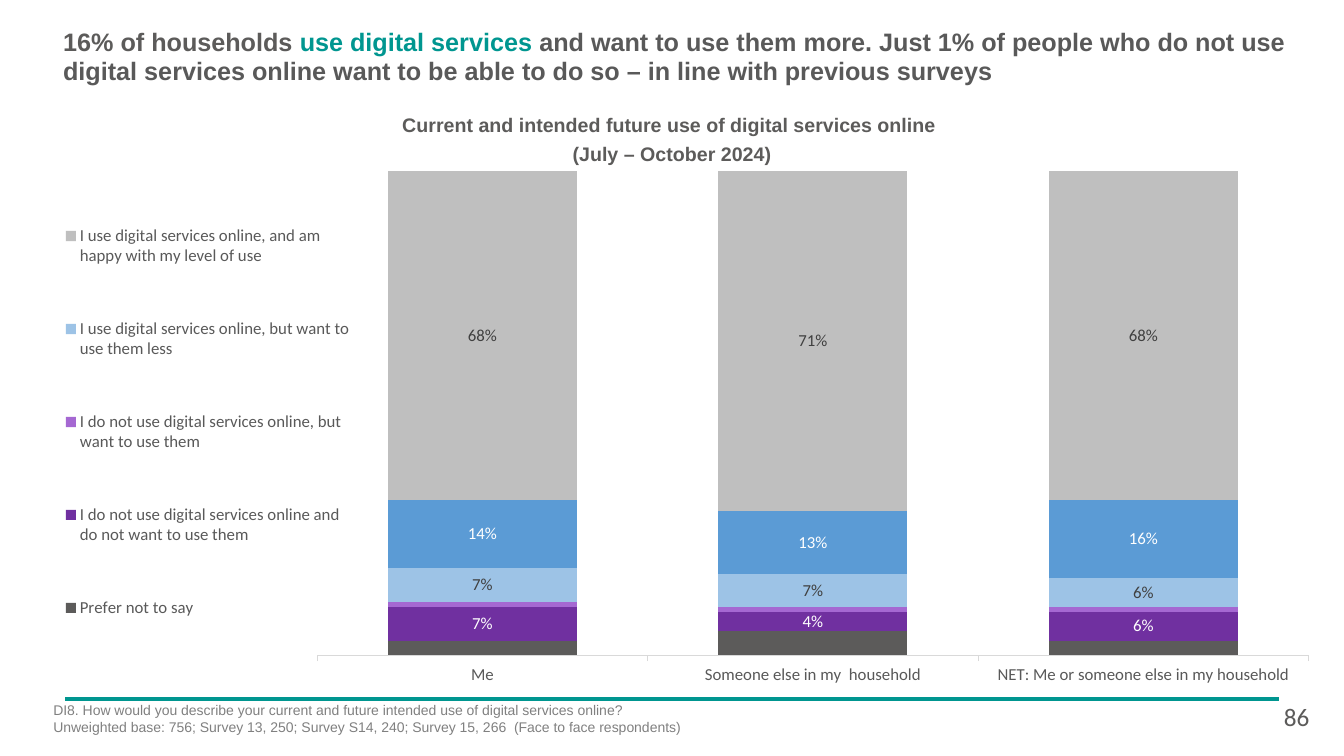
from lxml.etree import SubElement
from pptx import Presentation
from pptx.chart.data import CategoryChartData
from pptx.dml.color import RGBColor
from pptx.enum.chart import (XL_CHART_TYPE as ChartType, XL_LABEL_POSITION as LabelPosition,
                             XL_LEGEND_POSITION as LegendPosition, XL_TICK_MARK as TickMark)
from pptx.enum.shapes import MSO_CONNECTOR as Connector
from pptx.enum.text import MSO_ANCHOR as Anchor, PP_ALIGN as Align
from pptx.oxml.ns import qn
from pptx.util import Pt

COLORS = {
    "teal": "009690", "text": "595959", "dark": "5C5B5A", "note": "808080",
    "axis": "D9D9D9", "white": "FFFFFF", "label": "404040", "purple": "7030A0",
    "lilac": "A568D2", "pale blue": "9DC3E6", "blue": "5B9BD5", "grey": "BFBFBF",
    "pale grey": "F2F2F2",
}

CATEGORIES = ["Me", "Someone else in my  household", "NET: Me or someone else in my household"]

# Answer, shares by category, fill, label colour
ANSWERS = [
    ("Prefer not to say", (0.03, 0.05, 0.03), "dark", None),
    ("I do not use digital services online and do not want to use them",
     (0.07, 0.04, 0.06), "purple", "white"),
    ("I do not use digital services online, but want to use them",
     (0.01, 0.01, 0.01), "lilac", None),
    ("I use digital services online, but want to use them less",
     (0.07, 0.07, 0.06), "pale blue", "label"),
    ("Column1", (), "pale grey", None),
    ("I use digital services online, and want to use them more",
     (0.14, 0.13, 0.16), "blue", "white"),
    ("I use digital services online, and am happy with my level of use",
     (0.68, 0.71, 0.68), "grey", "label"),
]


def color(name):
    return RGBColor.from_string(COLORS[name])


def set_layout(element, position, inner=False, **fractions):
    """Place a plot area or legend by fractions of the chart frame."""
    for old in element.findall(qn("c:layout")):
        element.remove(old)
    layout = SubElement(element, qn("c:layout"))
    manual = SubElement(layout, qn("c:manualLayout"))
    if inner:
        SubElement(manual, qn("c:layoutTarget")).set("val", "inner")
    for side in "xy":
        SubElement(manual, qn(f"c:{side}Mode")).set("val", "edge")
    for side, fraction in fractions.items():
        SubElement(manual, qn(f"c:{side}")).set("val", str(fraction))
    element.insert(position, layout)


def drop_legend_entry(legend, index):
    entry = SubElement(legend, qn("c:legendEntry"))
    SubElement(entry, qn("c:idx")).set("val", str(index))
    SubElement(entry, qn("c:delete")).set("val", "1")
    legend.insert(1, entry)


class SlideBuilder:
    def __init__(self, slide, heading_font="Arial", chart_font="Calibri"):
        self.slide = slide
        self.heading_font = heading_font
        self.chart_font = chart_font

    def style(self, font, size, color_name, name, bold=False):
        font.size, font.name, font.bold = Pt(size), name, bold
        font.color.rgb = color(color_name)

    def text(self, box, paragraphs, size, font=None, bold=False, align=Align.LEFT,
             anchor=Anchor.TOP, line_spacing=None, gap=0):
        """Add a text box; each paragraph is a list of (text, colour) runs."""
        frame = self.slide.shapes.add_textbox(*map(Pt, box)).text_frame
        frame.word_wrap = True
        frame.vertical_anchor = anchor
        for index, runs in enumerate(paragraphs):
            paragraph = frame.add_paragraph() if index else frame.paragraphs[0]
            paragraph.alignment = align
            if line_spacing:
                paragraph.line_spacing = line_spacing
            if index:
                paragraph.space_before = Pt(gap)
            for words, color_name in runs:
                run = paragraph.add_run()
                run.text = words
                self.style(run.font, size, color_name, font or self.heading_font, bold)

    def line(self, start, end, color_name, width):
        line = self.slide.shapes.add_connector(Connector.STRAIGHT, *map(Pt, start + end))
        line.line.color.rgb = color(color_name)
        line.line.width = Pt(width)
        SubElement(line._element.spPr, qn("a:effectLst"))

    def stacked_chart(self, box, categories, answers):
        data = CategoryChartData(number_format="0%")
        data.categories = categories
        for name, shares, _, _ in answers:
            data.add_series(name, shares)
        chart = self.slide.shapes.add_chart(
            ChartType.COLUMN_STACKED_100, *map(Pt, box), data).chart
        chart.has_title = False
        self.style(chart.font, 12, "text", self.chart_font)

        plot = chart.plots[0]
        plot.gap_width, plot.overlap, plot.vary_by_categories = 75, 100, False
        for series, (_, _, fill, label_color) in zip(plot.series, answers):
            series.format.fill.solid()
            series.format.fill.fore_color.rgb = color(fill)
            series.invert_if_negative = False
            if label_color:
                labels = series.data_labels
                labels.show_value = True
                labels.position = LabelPosition.CENTER
                labels.number_format = "0%"
                labels.number_format_is_linked = False
                self.style(labels.font, 12, label_color, self.chart_font)

        value_axis = chart.value_axis
        value_axis.minimum_scale, value_axis.maximum_scale = 0, 1
        value_axis.has_major_gridlines = False
        value_axis.visible = False
        category_axis = chart.category_axis
        category_axis.major_tick_mark = TickMark.OUTSIDE
        category_axis.format.line.color.rgb = color("axis")
        category_axis.format.line.width = Pt(0.75)
        self.style(category_axis.tick_labels.font, 12, "text", self.chart_font)

        chart.has_legend = True
        legend = chart.legend
        legend.position = LegendPosition.LEFT
        legend.include_in_layout = False
        self.style(legend.font, 12, "text", self.chart_font)
        set_layout(legend._element, 1, x=0.008, y=0.005, w=0.23, h=0.95)
        for index, (_, shares, _, _) in enumerate(answers):
            if not shares:
                drop_legend_entry(legend._element, index)
        set_layout(chart._chartSpace.chart.plotArea, 0, inner=True,
                   x=0.21, y=0.001, w=0.789, h=0.924)


def main():
    presentation = Presentation()
    presentation.slide_width, presentation.slide_height = Pt(960), Pt(540)
    builder = SlideBuilder(presentation.slides.add_slide(presentation.slide_layouts[6]))

    builder.line((46.5, 499.5), (913.5, 499.5), "teal", 3)
    builder.text((38, 17, 898, 46), [[
        ("16% of households ", "dark"),
        ("use digital services", "teal"),
        (" and want to use them more. Just 1% of people who do not use digital services "
         "online want to be able to do so – in line with previous surveys", "text"),
    ]], 18, bold=True, line_spacing=0.95)
    builder.text((240, 87, 480, 27), [
        [("Current and intended future use of digital services online ", "dark")],
        [("(July – October 2024)", "dark")],
    ], 14, bold=True, align=Align.CENTER, anchor=Anchor.MIDDLE, line_spacing=0.9, gap=6)
    builder.stacked_chart((38, 121.7, 897.8, 374.5), CATEGORIES, ANSWERS)
    builder.text((31, 497.5, 875.5, 31), [
        [("DI8. How would you describe your current and future intended use of "
          "digital services online?", "note")],
        [("Unweighted base: 756; Survey 13, 250; Survey S14, 240; Survey 15, 266  "
          "(Face to face respondents)", "note")],
    ], 10)
    builder.text((910, 497.5, 50, 29), [[("86", "dark")]], 18, font=builder.chart_font)

    presentation.save("out.pptx")


if __name__ == "__main__":
    main()
